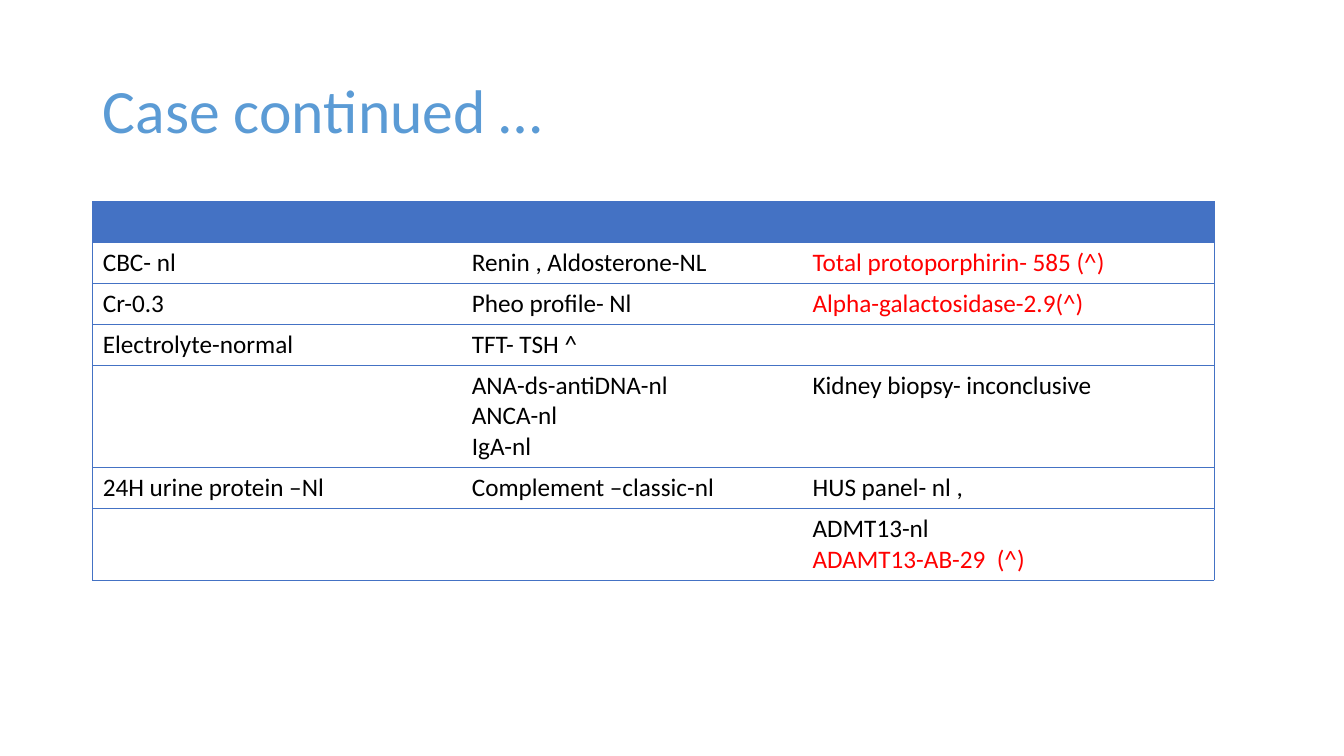
from dataclasses import dataclass

from lxml.etree import SubElement
from pptx import Presentation
from pptx.dml.color import RGBColor as RGB
from pptx.enum.text import MSO_ANCHOR, PP_ALIGN
from pptx.oxml.ns import qn
from pptx.util import Inches, Pt


@dataclass(frozen=True)
class Theme:
    font: str = "Calibri"
    title_size: int = 44
    body_size: int = 18
    title: str = "5B9BD5"
    text: str = "000000"
    abnormal: str = "FF0000"
    accent: str = "4472C4"
    border: float = 0.5


THEME = Theme()
COLUMN_WIDTHS = (3.66, 3.38, 4.08)
LINE_HEIGHT, CELL_PADDING = 0.305, 0.1

# Each cell is a list of lines; ABNORMAL holds the results shown in red
RESULTS = [
    [[], [], []],
    [["CBC- nl"], ["Renin , Aldosterone-NL"], ["Total protoporphirin- 585 (^)"]],
    [["Cr-0.3"], ["Pheo profile- Nl"], ["Alpha-galactosidase-2.9(^)"]],
    [["Electrolyte-normal"], ["TFT- TSH ^"], []],
    [[], ["ANA-ds-antiDNA-nl", "ANCA-nl", "IgA-nl"], ["Kidney biopsy- inconclusive"]],
    [["24H urine protein –Nl"], ["Complement –classic-nl"], ["HUS panel- nl ,"]],
    [[], [], ["ADMT13-nl", "ADAMT13-AB-29  (^)"]],
]
ABNORMAL = {
    "Total protoporphirin- 585 (^)",
    "Alpha-galactosidase-2.9(^)",
    "ADAMT13-AB-29  (^)",
}


def style(paragraph, size, color):
    font = paragraph.font
    font.name, font.size = THEME.font, Pt(size)
    font.color.rgb = RGB.from_string(color)


def add_title(slide, text, left, top, width, height):
    title = slide.shapes.title
    title.left, title.top = Inches(left), Inches(top)
    title.width, title.height = Inches(width), Inches(height)
    frame = title.text_frame
    frame.text = text
    frame.word_wrap = True
    frame.vertical_anchor = MSO_ANCHOR.MIDDLE
    heading = frame.paragraphs[0]
    heading.alignment = PP_ALIGN.LEFT
    heading.line_spacing = 0.9
    style(heading, THEME.title_size, THEME.title)


def set_borders(cell, sides):
    """Draw the named sides and leave the others open."""
    properties = cell._tc.get_or_add_tcPr()
    for side in "LRTB":
        line = SubElement(properties, qn(f"a:ln{side}"), w=str(Pt(THEME.border)))
        if side in sides:
            fill = SubElement(line, qn("a:solidFill"))
            SubElement(fill, qn("a:srgbClr"), val=THEME.accent)
        else:
            SubElement(line, qn("a:noFill"))


def fill_cell(cell, lines, is_header, sides):
    set_borders(cell, sides)
    if is_header:
        cell.fill.solid()
        cell.fill.fore_color.rgb = RGB.from_string(THEME.accent)
    else:
        cell.fill.background()
    frame = cell.text_frame
    frame.text = "\n".join(lines)
    for paragraph in frame.paragraphs:
        color = THEME.abnormal if paragraph.text in ABNORMAL else THEME.text
        style(paragraph, THEME.body_size, color)


def add_results(slide, left, top):
    heights = [
        CELL_PADDING + LINE_HEIGHT * max(1, *map(len, row)) for row in RESULTS
    ]
    table = slide.shapes.add_table(
        len(RESULTS), len(COLUMN_WIDTHS), Inches(left), Inches(top),
        Inches(sum(COLUMN_WIDTHS)), Inches(sum(heights)),
    ).table
    table.horz_banding = False
    for column, width in zip(table.columns, COLUMN_WIDTHS):
        column.width = Inches(width)
    last = len(COLUMN_WIDTHS) - 1
    for r, (row, height) in enumerate(zip(RESULTS, heights)):
        table.rows[r].height = Inches(height)
        for c, lines in enumerate(row):
            # Rules between rows, and a frame with no inner vertical lines
            sides = "TB" + "L" * (c == 0) + "R" * (c == last)
            fill_cell(table.cell(r, c), lines, r == 0, sides)


def main():
    deck = Presentation()
    deck.slide_width, deck.slide_height = Inches(13.33), Inches(7.5)
    slide = deck.slides.add_slide(deck.slide_layouts[5])
    add_title(slide, "Case continued …", 0.92, 0.4, 11.5, 1.45)
    add_results(slide, 0.92, 2)
    deck.save("out.pptx")


if __name__ == "__main__":
    main()
